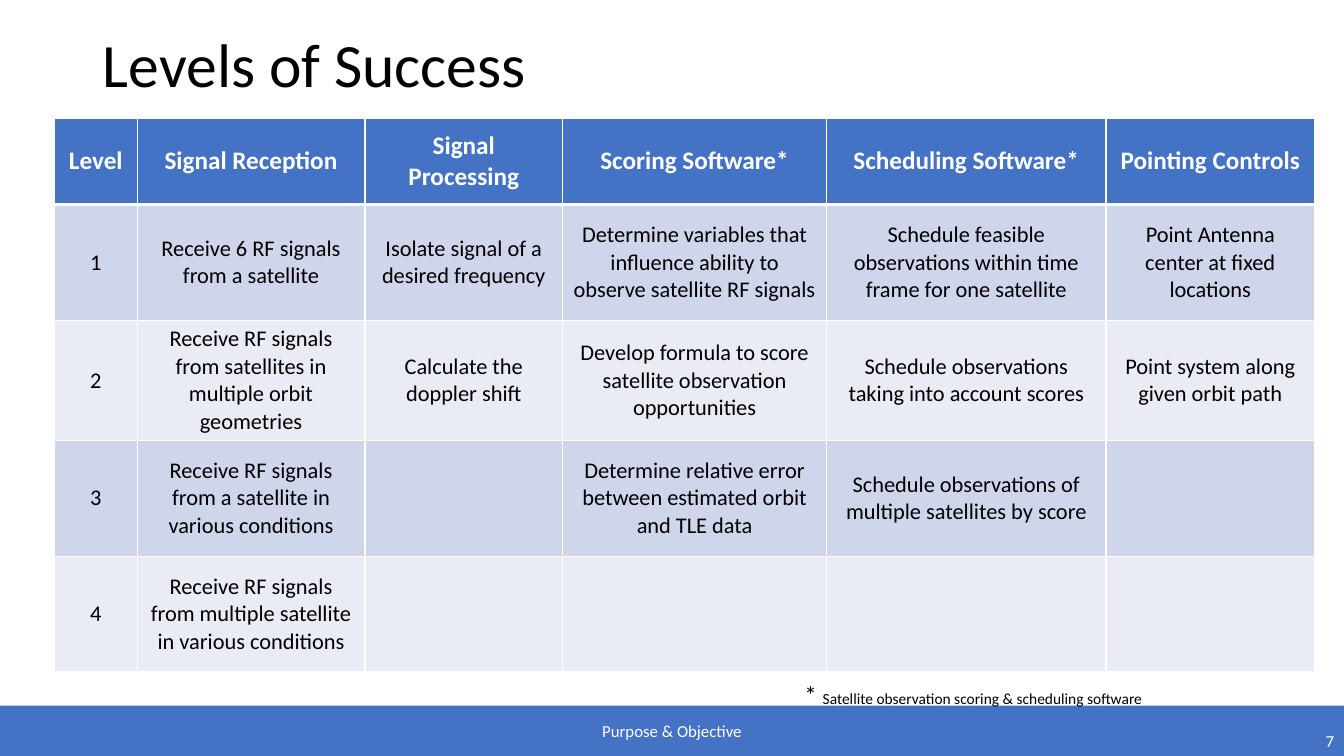
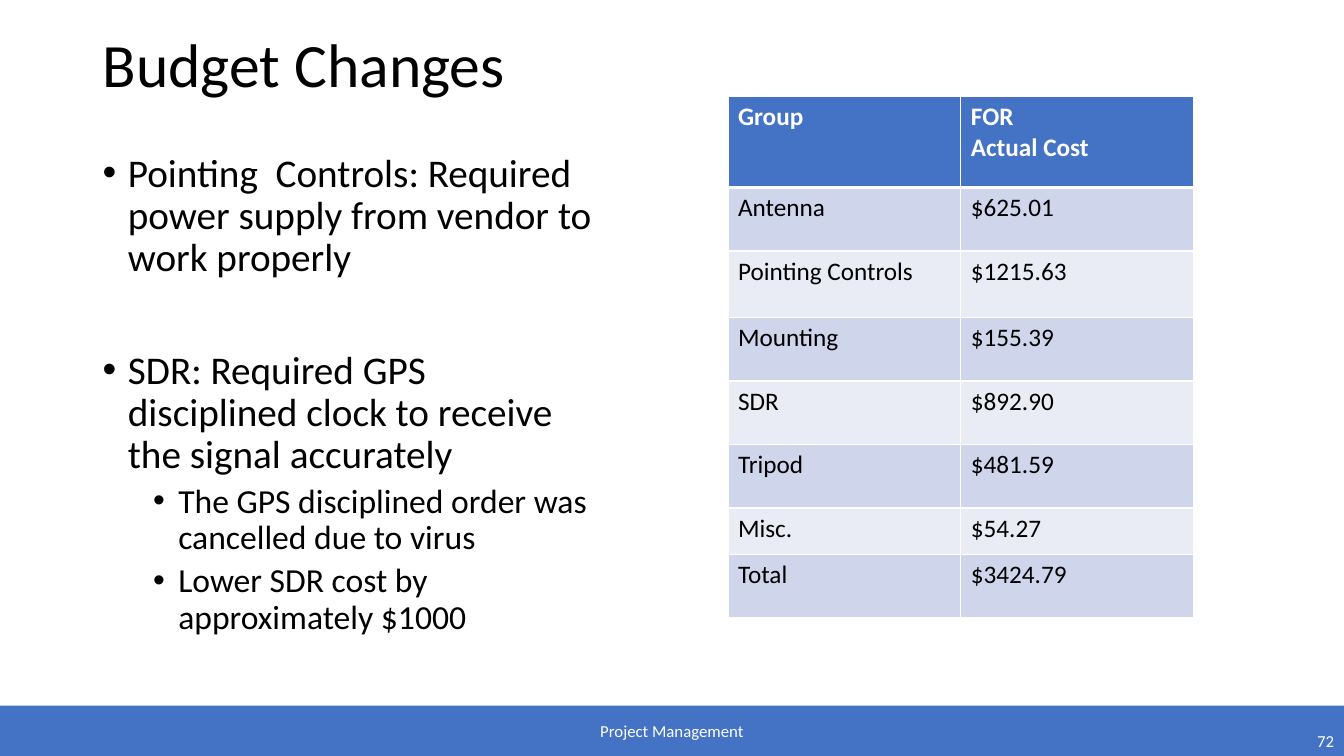
import pptx
import pptx.dml.color
import pptx.enum.shapes
import pptx.enum.text
import pptx.oxml
import pptx.oxml.ns
import pptx.util

Inches = pptx.util.Inches
Pt = pptx.util.Pt
ALIGN = pptx.enum.text.PP_ALIGN
ANCHOR = pptx.enum.text.MSO_ANCHOR

FONT = "Calibri"
BLUE, WHITE, BLACK = "4472C4", "FFFFFF", "000000"
BANDS = ["CFD5EA", "E9EBF5"]


def rgb(value):
    return pptx.dml.color.RGBColor.from_string(value)


def write(p, text, size=18, color=BLACK, bold=False, align=ALIGN.LEFT):
    """Append a formatted run to paragraph p."""
    r = p.add_run()
    r.text = text
    r.font.name = FONT
    r.font.size = Pt(size)
    r.font.bold = bold
    r.font.color.rgb = rgb(color)
    p.alignment = align


pages = [
    {
        "title": "Levels of Success",
        "section": "Purpose & Objective",
        "number": "7",
        "at": (0.54, 1.17),
        "cols": [0.82, 2.26, 1.96, 2.62, 2.77, 2.07],
        "heights": [0.86] + [1.15] * 4,
        "size": 16,
        "align": ALIGN.CENTER,
        "anchor": ANCHOR.MIDDLE,
        "rows": [
            ["Level", "Signal Reception", "Signal Processing", "Scoring Software*",
             "Scheduling Software*", "Pointing Controls"],
            ["1", "Receive 6 RF signals from a satellite",
             "Isolate signal of a desired frequency",
             "Determine variables that influence ability to observe satellite RF signals",
             "Schedule feasible observations within time frame for one satellite",
             "Point Antenna center at fixed locations"],
            ["2", "Receive RF signals from satellites in multiple orbit geometries",
             "Calculate the doppler shift",
             "Develop formula to score satellite observation opportunities",
             "Schedule observations taking into account scores",
             "Point system along given orbit path"],
            ["3", "Receive RF signals from a satellite in various conditions", "",
             "Determine relative error between estimated orbit and TLE data",
             "Schedule observations of multiple satellites by score", ""],
            ["4", "Receive RF signals from multiple satellite in various conditions",
             "", "", "", ""],
        ],
    },
    {
        "title": "Budget Changes",
        "section": "Project Management",
        "number": "72",
        "at": (7.22, 0.96),
        "cols": [2.31, 2.31],
        "heights": [0.9, 0.63, 0.66, 0.63, 0.63, 0.63, 0.46, 0.63],
        "size": 18,
        "align": ALIGN.LEFT,
        "anchor": ANCHOR.TOP,
        "rows": [
            ["Group", "FOR\nActual Cost"],
            ["Antenna", "$625.01"],
            ["Pointing Controls", "$1215.63"],
            ["Mounting", "$155.39"],
            ["SDR", "$892.90"],
            ["Tripod", "$481.59"],
            ["Misc.", "$54.27"],
            ["Total", "$3424.79"],
        ],
    },
]

prs = pptx.Presentation()
prs.slide_width = Inches(13.33)
prs.slide_height = Inches(7.5)

slides = []
for page in pages:
    s = prs.slides.add_slide(prs.slide_layouts[5])
    slides.append(s)

    # Title
    title = s.shapes.title
    title.left, title.top = Inches(0.92), Inches(0.02)
    title.width, title.height = Inches(11.5), Inches(1.3)
    tf = title.text_frame
    tf.auto_size = pptx.enum.text.MSO_AUTO_SIZE.NONE
    tf.vertical_anchor = ANCHOR.MIDDLE
    tf.paragraphs[0].line_spacing = 0.9
    write(tf.paragraphs[0], page["title"], size=44)

    # Table
    left, top = page["at"]
    table = s.shapes.add_table(
        len(page["rows"]), len(page["cols"]), Inches(left), Inches(top),
        Inches(sum(page["cols"])), Inches(sum(page["heights"]))).table
    for column, width in zip(table.columns, page["cols"]):
        column.width = Inches(width)
    for i, (row, height) in enumerate(zip(table.rows, page["heights"])):
        row.height = Inches(height)
        header = i == 0
        for cell, text in zip(row.cells, page["rows"][i]):
            tc_pr = cell._tc.get_or_add_tcPr()
            for side in "LRTB":
                thick = (header and side == "B") or (i == 1 and side == "T")
                tc_pr.append(pptx.oxml.parse_xml(
                    f'<a:ln{side} {pptx.oxml.ns.nsdecls("a")} w="{Pt(3 if thick else 1)}">'
                    f'<a:solidFill><a:srgbClr val="{WHITE}"/></a:solidFill></a:ln{side}>'))
            cell.fill.solid()
            cell.fill.fore_color.rgb = rgb(BLUE if header else BANDS[(i - 1) % 2])
            cell.vertical_anchor = page["anchor"]
            if not text:
                continue
            tf = cell.text_frame
            for n, line in enumerate(text.split("\n")):
                p = tf.add_paragraph() if n else tf.paragraphs[0]
                write(p, line, size=18 if header else page["size"],
                      color=WHITE if header else BLACK, bold=header, align=page["align"])

    # Footer band and slide number
    band = s.shapes.add_shape(pptx.enum.shapes.MSO_SHAPE.RECTANGLE,
                              0, Inches(7), prs.slide_width, Inches(0.5))
    band.shadow.inherit = False
    band.fill.solid()
    band.fill.fore_color.rgb = rgb(BLUE)
    band.line.fill.background()
    band.text_frame.vertical_anchor = ANCHOR.MIDDLE
    write(band.text_frame.paragraphs[0], page["section"], size=12, color=WHITE,
          align=ALIGN.CENTER)

    number = s.shapes.add_textbox(Inches(10.33), Inches(7.19), Inches(3), Inches(0.31))
    number.text_frame.word_wrap = True
    number.text_frame.vertical_anchor = ANCHOR.MIDDLE
    write(number.text_frame.paragraphs[0], page["number"], size=12, color=WHITE,
          align=ALIGN.RIGHT)

# Footnote to the success levels
footnote = slides[0].shapes.add_textbox(Inches(7.88), Inches(6.69), Inches(5.18), Inches(0.4))
footnote.text_frame.word_wrap = True
p = footnote.text_frame.paragraphs[0]
write(p, "* ", size=18)
write(p, "Satellite observation scoring & scheduling software", size=11)

# Reasons for the budget changes: level, space before, text
reasons = [
    (0, 0, "Pointing  Controls: Required power supply from vendor to work properly"),
    (0, 50, "SDR: Required GPS disciplined clock to receive the signal accurately"),
    (1, 5, "The GPS disciplined order was cancelled due to virus"),
    (1, 5, "Lower SDR cost by approximately $1000"),
]
body = slides[1].shapes.add_textbox(Inches(0.92), Inches(1.47), Inches(5.08), Inches(5.29))
tf = body.text_frame
tf.word_wrap = True
for n, (level, space, text) in enumerate(reasons):
    p = tf.add_paragraph() if n else tf.paragraphs[0]
    p_pr = p._p.get_or_add_pPr()
    p_pr.set("marL", str(Inches(0.25 + 0.5 * level)))
    p_pr.set("indent", str(Inches(-0.25)))
    for bullet in ('buFont {} typeface="Arial"', 'buChar {} char="•"'):
        p_pr.append(pptx.oxml.parse_xml(f'<a:{bullet.format(pptx.oxml.ns.nsdecls("a"))}/>'))
    p.level = level
    p.line_spacing = 0.9
    p.space_before = Pt(space)
    write(p, text, size=28 - 4 * level)

prs.save("out.pptx")
